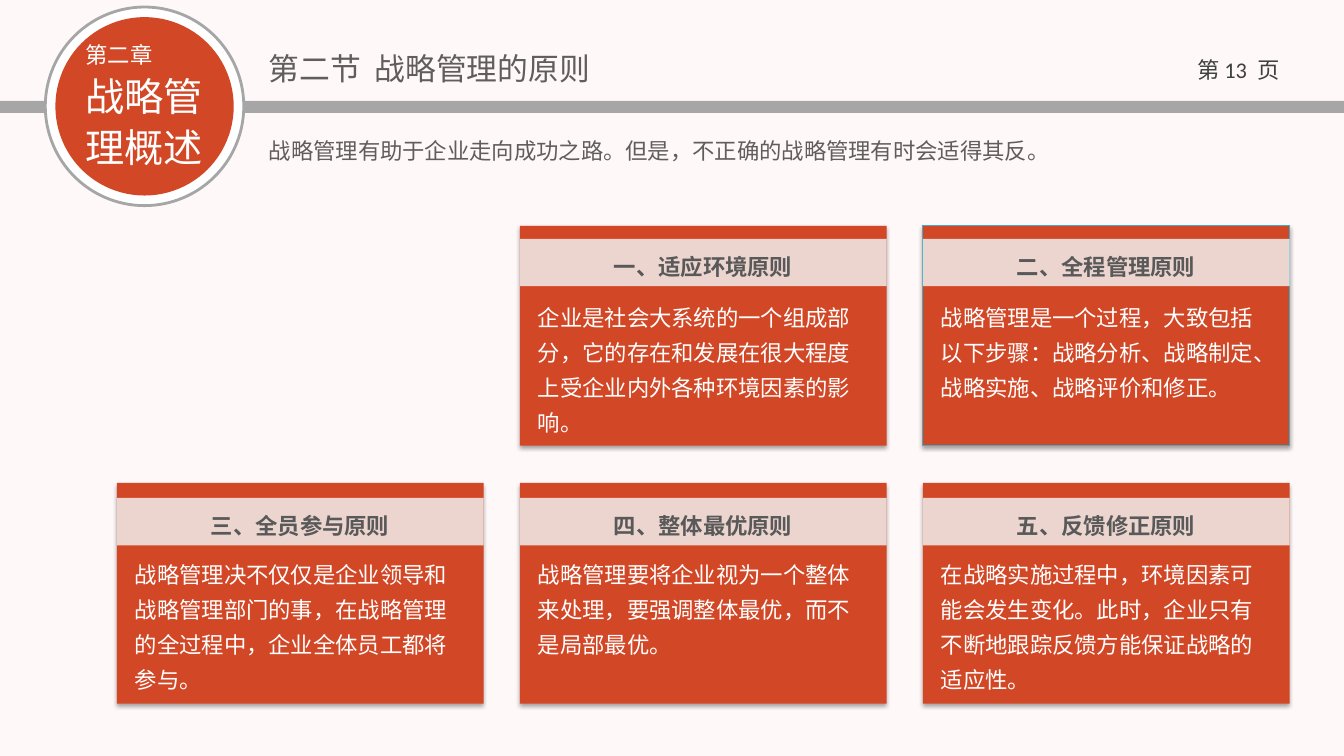
from lxml.etree import SubElement
from pptx import Presentation
from pptx.dml.color import RGBColor
from pptx.enum.shapes import MSO_SHAPE as Shape
from pptx.enum.text import PP_ALIGN as Align
from pptx.oxml.ns import qn
from pptx.util import Inches, Pt

COLORS = {
    "background": "FFF8F8", "gray": "A6A6A6", "white": "FFFFFF", "red": "D24726",
    "band": "F2F2F2", "teal": "46AAC5", "page": "404040", "text": "5F5E5C",
    "heading": "595959", "black": "000000",
}
FONT = "Noto Sans CJK SC"
CARD_WIDTH = 3.64
COLUMN_LEFT, COLUMN_PITCH = 1.16, 4.0
ROWS = [
    {"top": 2.24, "height": 2.18, "band": 0.13},
    {"top": 4.79, "height": 2.19, "band": 0.15},
]
CARDS = [
    (0, 1, "一、适应环境原则",
     "企业是社会大系统的一个组成部分，它的存在和发展在很大程度上受企业内外各种环境因素的影响。", None),
    (0, 2, "二、全程管理原则",
     "战略管理是一个过程，大致包括以下步骤：战略分析、战略制定、战略实施、战略评价和修正。", "teal"),
    (1, 0, "三、全员参与原则",
     "战略管理决不仅仅是企业领导和战略管理部门的事，在战略管理的全过程中，企业全体员工都将参与。", None),
    (1, 1, "四、整体最优原则",
     "战略管理要将企业视为一个整体来处理，要强调整体最优，而不是局部最优。", None),
    (1, 2, "五、反馈修正原则",
     "在战略实施过程中，环境因素可能会发生变化。此时，企业只有不断地跟踪反馈方能保证战略的适应性。", None),
]


def rgb(name):
    return RGBColor.from_string(COLORS[name])


class SlideBuilder:
    def __init__(self, slide):
        self.slide = slide
        slide.background.fill.solid()
        slide.background.fill.fore_color.rgb = rgb("background")

    def shape(self, kind, box, fill, line=None, line_width=0.75, alpha=None):
        shape = self.slide.shapes.add_shape(kind, *map(Inches, box))
        shape.shadow.inherit = False
        shape.fill.solid()
        shape.fill.fore_color.rgb = rgb(fill)
        if alpha:
            color = shape._element.spPr.find(qn("a:solidFill"))[0]
            SubElement(color, qn("a:alpha"), val=str(alpha * 1000))
        if line:
            shape.line.color.rgb = rgb(line)
            shape.line.width = Pt(line_width)
        else:
            shape.line.fill.background()
        return shape

    def add_shadow(self, shape):
        effects = shape._element.spPr.find(qn("a:effectLst"))
        shadow = SubElement(effects, qn("a:outerShdw"), blurRad=str(Pt(3.1)),
                            dist=str(Pt(1.8)), dir="5400000", rotWithShape="0")
        color = SubElement(shadow, qn("a:srgbClr"), val=COLORS["black"])
        SubElement(color, qn("a:alpha"), val="35000")

    def style(self, paragraph, size, color, align=Align.LEFT, bold=False,
              spacing=None, before=0, after=0):
        paragraph.alignment = align
        paragraph.line_spacing = spacing
        paragraph.space_before = Pt(before)
        paragraph.space_after = Pt(after)
        font = paragraph.font
        font.name, font.size, font.bold = FONT, Pt(size), bold
        font.color.rgb = rgb(color)
        SubElement(font._element, qn("a:ea"), typeface=FONT)

    def frame(self, box):
        frame = self.slide.shapes.add_textbox(*map(Inches, box)).text_frame
        frame.word_wrap = True
        return frame

    def text(self, box, text, size, color, **style):
        paragraph = self.frame(box).paragraphs[0]
        paragraph.add_run().text = text
        self.style(paragraph, size, color, **style)

    def chapter_badge(self):
        self.shape(Shape.OVAL, (0.45, 0.07, 1.97, 1.97), "white", "gray", 2)
        self.shape(Shape.OVAL, (0.55, 0.17, 1.77, 1.77), "red")
        frame = self.frame((0.75, 0.36, 1.73, 1.4))
        frame.text = "第二章\n战略管\n理概述"
        for paragraph, size, before in zip(frame.paragraphs, (16, 28, 28), (4, 0, 0)):
            self.style(paragraph, size, "white", before=before, after=3)

    def page_number(self):
        paragraph = self.frame((11.69, 0.51, 1.2, 0.4)).paragraphs[0]
        for text, font in (("第 ", FONT), ("13  ", "Calibri"), ("页", FONT)):
            run = paragraph.add_run()
            run.text = text
            run.font.name = font
        self.style(paragraph, 16, "page", align=Align.CENTER)

    def card(self, row, column, heading, body, line):
        left = COLUMN_LEFT + column * COLUMN_PITCH
        top, height = ROWS[row]["top"], ROWS[row]["height"]
        band_top = top + ROWS[row]["band"]
        panel = self.shape(Shape.RECTANGLE, (left, top, CARD_WIDTH, height), "red", line)
        self.add_shadow(panel)
        self.shape(Shape.RECTANGLE, (left, band_top, CARD_WIDTH, 0.47), "band", alpha=83)
        self.text((left, band_top + 0.01, CARD_WIDTH, 0.45), heading, 16, "heading",
                  align=Align.CENTER, bold=True, spacing=1.3)
        self.text((left + 0.08, top + 0.65, CARD_WIDTH - 0.16, 1.47), body, 16, "white",
                  spacing=1.3)


def main():
    presentation = Presentation()
    presentation.slide_width = Inches(13.34)
    presentation.slide_height = Inches(7.5)
    builder = SlideBuilder(presentation.slides.add_slide(presentation.slide_layouts[6]))
    builder.shape(Shape.RECTANGLE, (0, 1, 13.34, 0.12), "gray")
    builder.chapter_badge()
    builder.page_number()
    builder.text((2.57, 0.44, 5.44, 0.47), "第二节  战略管理的原则", 22, "text")
    builder.text((2.57, 1.23, 10.5, 0.42),
                 "战略管理有助于企业走向成功之路。但是，不正确的战略管理有时会适得其反。",
                 16, "text", spacing=1.3, after=6)
    for card in CARDS:
        builder.card(*card)
    presentation.save("out.pptx")


if __name__ == "__main__":
    main()
